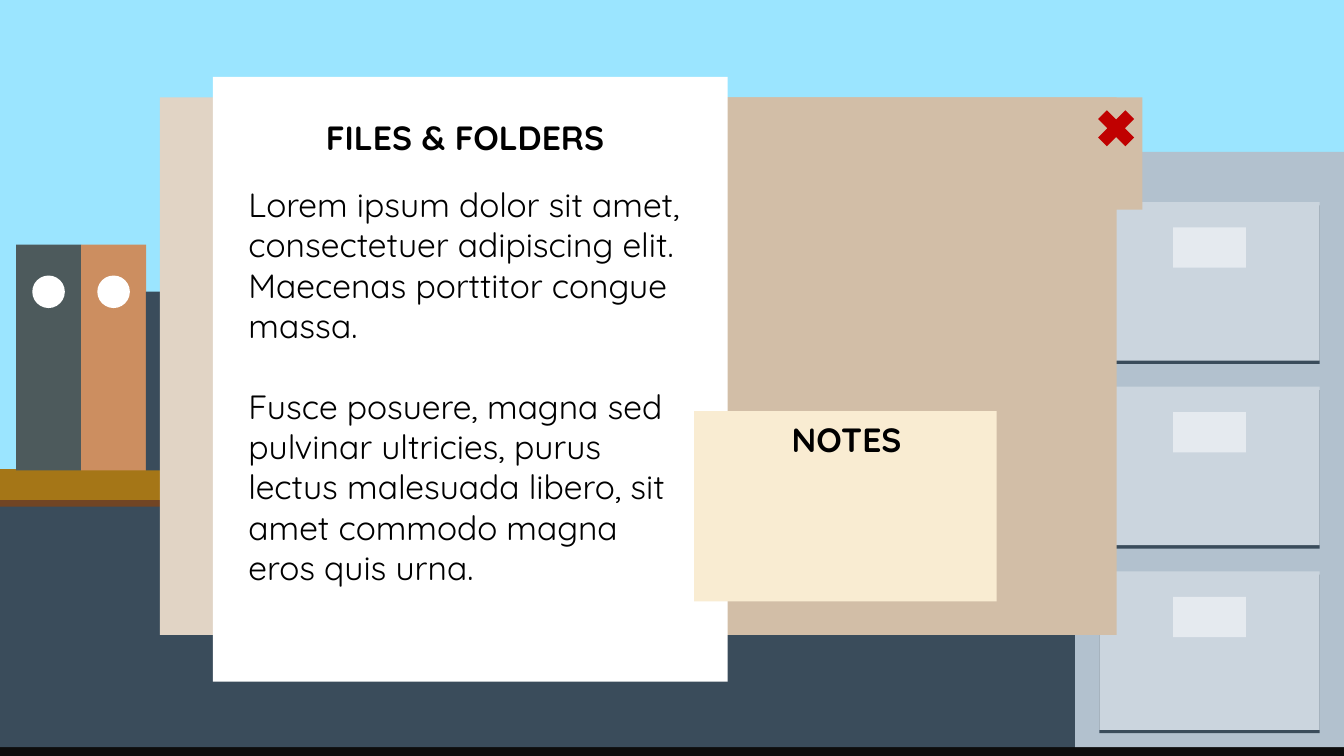
from pptx import Presentation
from pptx import util as u
from pptx.dml.color import RGBColor
from pptx.enum import shapes, text

COLUMNS, ROWS = 100, 56.25
CELL = u.Inches(0.1)

SKY, FLOOR, SLATE = "9BE5FF", "0D0D0D", "3A4C5B"
WOOD, WOOD_EDGE = "A57617", "724524"
CABINET, DRAWER, LABEL = "B2C1CE", "CBD5DE", "E5EAEF"
COVER, FOLDER, PAPER, NOTE = "E1D4C5", "D2BEA7", "FFFFFF", "F9ECD2"
INK, RED = "000000", "C00000"


def color(code):
    return RGBColor.from_string(code)


def write(frame, paragraphs, font="Quicksand", size=18, fill=INK, bold=False,
          align=text.PP_ALIGN.LEFT, gap=0):
    """Fill a text frame; gap is the space in points between paragraphs."""
    for index, words in enumerate(paragraphs):
        para = frame.paragraphs[0] if index == 0 else frame.add_paragraph()
        para.alignment = align
        if index and gap:
            para.space_before = u.Pt(gap)
        span = para.add_run()
        span.text = words
        span.font.name = font
        span.font.size = u.Pt(size)
        span.font.bold = bold
        span.font.color.rgb = color(fill)


class Scene:
    """Draws on one page, with lengths in grid columns and rows."""

    def __init__(self, page):
        self.page = page

    def place(self, *cells):
        return [round(cell * CELL) for cell in cells]

    def shape(self, kind, left, top, width, height, fill):
        shape = self.page.shapes.add_shape(
            kind, *self.place(left, top, width, height))
        shape.shadow.inherit = False
        shape.fill.solid()
        shape.fill.fore_color.rgb = color(fill)
        shape.line.fill.background()

    def rect(self, *place_and_fill):
        self.shape(shapes.MSO_SHAPE.RECTANGLE, *place_and_fill)

    def words(self, left, top, width, height, paragraphs, **style):
        box = self.page.shapes.add_textbox(
            *self.place(left, top, width, height))
        box.text_frame.word_wrap = True
        write(box.text_frame, paragraphs, **style)

    def heading(self, left, top, width, words):
        self.words(left, top, width, 4, [words], bold=True,
                   align=text.PP_ALIGN.CENTER)

    def binder(self, left, fill):
        self.rect(left, 18.2, 4.84, 16.8, fill)
        self.shape(shapes.MSO_SHAPE.OVAL, left + 1.2, 20.5, 2.42, 2.42, PAPER)

    def drawer(self, top):
        self.rect(81.8, top + 0.25, 16.4, 11.8, SLATE)
        self.rect(81.8, top, 16.4, 11.8, DRAWER)
        self.rect(87.3, top + 1.9, 5.4, 3, LABEL)


def draw_office(scene):
    scene.rect(0, 0, COLUMNS, ROWS, SKY)
    scene.rect(0, 51.5, COLUMNS, 4.75, FLOOR)
    scene.rect(0, 37.2, 80, 18.4, SLATE)
    scene.rect(0, 35, 80, 2.7, WOOD_EDGE)
    scene.rect(0, 34.9, 80, 2.3, WOOD)
    for index, fill in enumerate(("4D5A5C", "CC8E60")):
        scene.binder(1.2 + index * 4.84, fill)
    scene.rect(10.85, 21.7, 2.4, 13.3, SLATE)
    scene.rect(80, 11.3, 20, 44.3, CABINET)
    for index in range(3):
        scene.drawer(15.03 + index * 13.74)


def draw_folder(scene):
    scene.rect(11.9, 7.25, 35.6, 40, COVER)
    scene.rect(47.5, 7.25, 35.6, 40, FOLDER)
    scene.rect(49.4, 7.25, 35.6, 8.35, FOLDER)
    scene.rect(15.85, 5.73, 38.3, 45, PAPER)
    scene.heading(20, 8.2, 29.2, "FILES & FOLDERS")
    scene.words(17.5, 13.2, 34.2, 31.3, [
        "Lorem ipsum dolor sit amet, consectetuer adipiscing elit. "
        "Maecenas porttitor congue massa.",
        "Fusce posuere, magna sed pulvinar ultricies, purus lectus "
        "malesuada libero, sit amet commodo magna eros quis urna.",
    ], gap=21.6)
    scene.rect(51.65, 30.6, 22.5, 14.15, NOTE)
    scene.heading(51.7, 30.7, 22.6, "NOTES")
    scene.shape(shapes.MSO_SHAPE.MATH_MULTIPLY, 81.1, 7.6, 3.9, 3.9, RED)


def main():
    deck = Presentation()
    deck.slide_width = round(COLUMNS * CELL)
    deck.slide_height = round(ROWS * CELL)
    scene = Scene(deck.slides.add_slide(deck.slide_layouts[6]))
    draw_office(scene)
    draw_folder(scene)
    deck.save("out.pptx")


if __name__ == "__main__":
    main()
